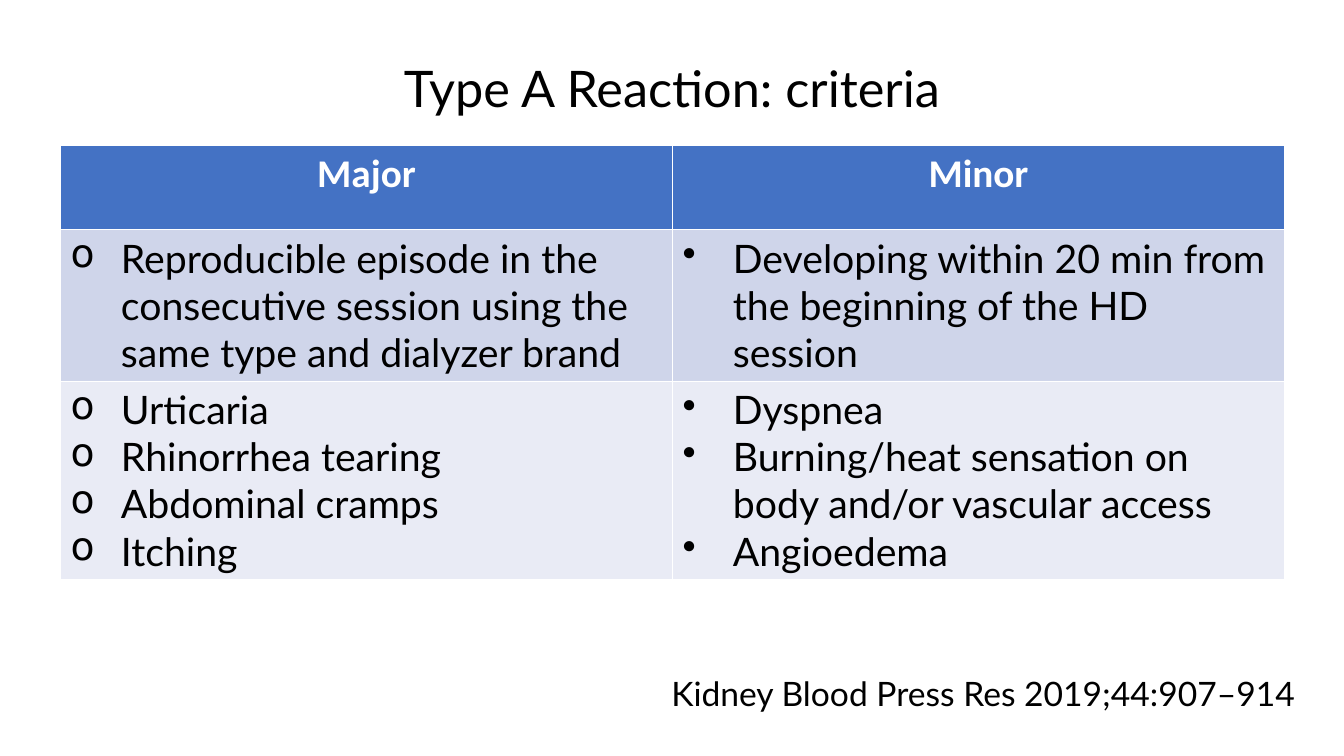
from lxml import etree
from pptx import Presentation
from pptx.dml.color import RGBColor
from pptx.enum.text import MSO_ANCHOR as Anchor, MSO_AUTO_SIZE as AutoSize, PP_ALIGN as Align
from pptx.oxml.ns import qn
from pptx.util import Inches, Pt

BLACK, WHITE = "000000", "FFFFFF"
HEADER_FILL = "4472C4"
BODY_FILLS = ["CFD5EA", "E9EBF5"]
HEADERS = ["Major", "Minor"]
BULLETS = ["o", "•"]
ROW_HEIGHTS = [0.84, 1.5, 1.97]
CRITERIA = [
    [
        ["Reproducible episode in the consecutive session using the same type and dialyzer brand"],
        ["Developing within 20 min from the beginning of the HD session"],
    ],
    [
        ["Urticaria", "Rhinorrhea tearing", "Abdominal cramps", "Itching"],
        ["Dyspnea", "Burning/heat sensation on body and/or vascular access", "Angioedema"],
    ],
]


def color(hex_string):
    return RGBColor.from_string(hex_string)


def format_runs(para, size, font="Lato", hex_string=BLACK, bold=False):
    for span in para.runs:
        span.font.name = font
        span.font.size = Pt(size)
        span.font.bold = bold
        span.font.color.rgb = color(hex_string)


def add_bullet(para, symbol):
    properties = para._p.get_or_add_pPr()
    properties.set("marL", str(Inches(0.5)))
    properties.set("indent", str(-Inches(0.5)))
    etree.SubElement(properties, qn("a:buChar")).set("char", symbol)


def fill_cell(cell, hex_string):
    cell.fill.solid()
    cell.fill.fore_color.rgb = color(hex_string)


def place_title(slide, left, top, width, height):
    title = slide.shapes.title
    title.left, title.top = Inches(left), Inches(top)
    title.width, title.height = Inches(width), Inches(height)
    frame = title.text_frame
    frame.text = "Type A Reaction: criteria"
    frame.word_wrap = True
    frame.vertical_anchor = Anchor.TOP
    frame.auto_size = AutoSize.SHAPE_TO_FIT_TEXT
    para = frame.paragraphs[0]
    para.alignment = Align.CENTER
    para.line_spacing = 1.5
    para.space_before = Pt(0)
    format_runs(para, 36)


def place_criteria(slide, left, top, width):
    frame = slide.shapes.add_table(
        len(ROW_HEIGHTS), len(HEADERS),
        Inches(left), Inches(top), Inches(width), Inches(sum(ROW_HEIGHTS)))
    table = frame.table
    for row, height in zip(table.rows, ROW_HEIGHTS):
        row.height = Inches(height)

    # Header row
    for column, header in enumerate(HEADERS):
        cell = table.cell(0, column)
        cell.text_frame.text = header
        fill_cell(cell, HEADER_FILL)
        para = cell.text_frame.paragraphs[0]
        para.alignment = Align.CENTER
        format_runs(para, 28, "Calibri", WHITE, True)

    # Bulleted criteria
    for row, (groups, body_fill) in enumerate(zip(CRITERIA, BODY_FILLS), start=1):
        for column, (items, symbol) in enumerate(zip(groups, BULLETS)):
            cell = table.cell(row, column)
            cell.text_frame.text = "\n".join(items)
            fill_cell(cell, body_fill)
            for para in cell.text_frame.paragraphs:
                add_bullet(para, symbol)
                format_runs(para, 28)


def place_citation(slide, left, top, width, height):
    box = slide.shapes.add_textbox(Inches(left), Inches(top), Inches(width), Inches(height))
    frame = box.text_frame
    frame.word_wrap = True
    frame.auto_size = AutoSize.SHAPE_TO_FIT_TEXT
    frame.text = "Kidney Blood Press Res 2019;44:907–914"
    format_runs(frame.paragraphs[0], 24)


def main():
    deck = Presentation()
    deck.slide_width, deck.slide_height = Inches(13.33), Inches(7.5)
    slide = deck.slides.add_slide(deck.slide_layouts[5])
    place_title(slide, 0, 0.22, 13.33, 0.93)
    place_criteria(slide, 0.6, 1.44, 12.14)
    place_citation(slide, 6.56, 6.63, 6.66, 0.5)
    deck.save("out.pptx")


if __name__ == "__main__":
    main()
